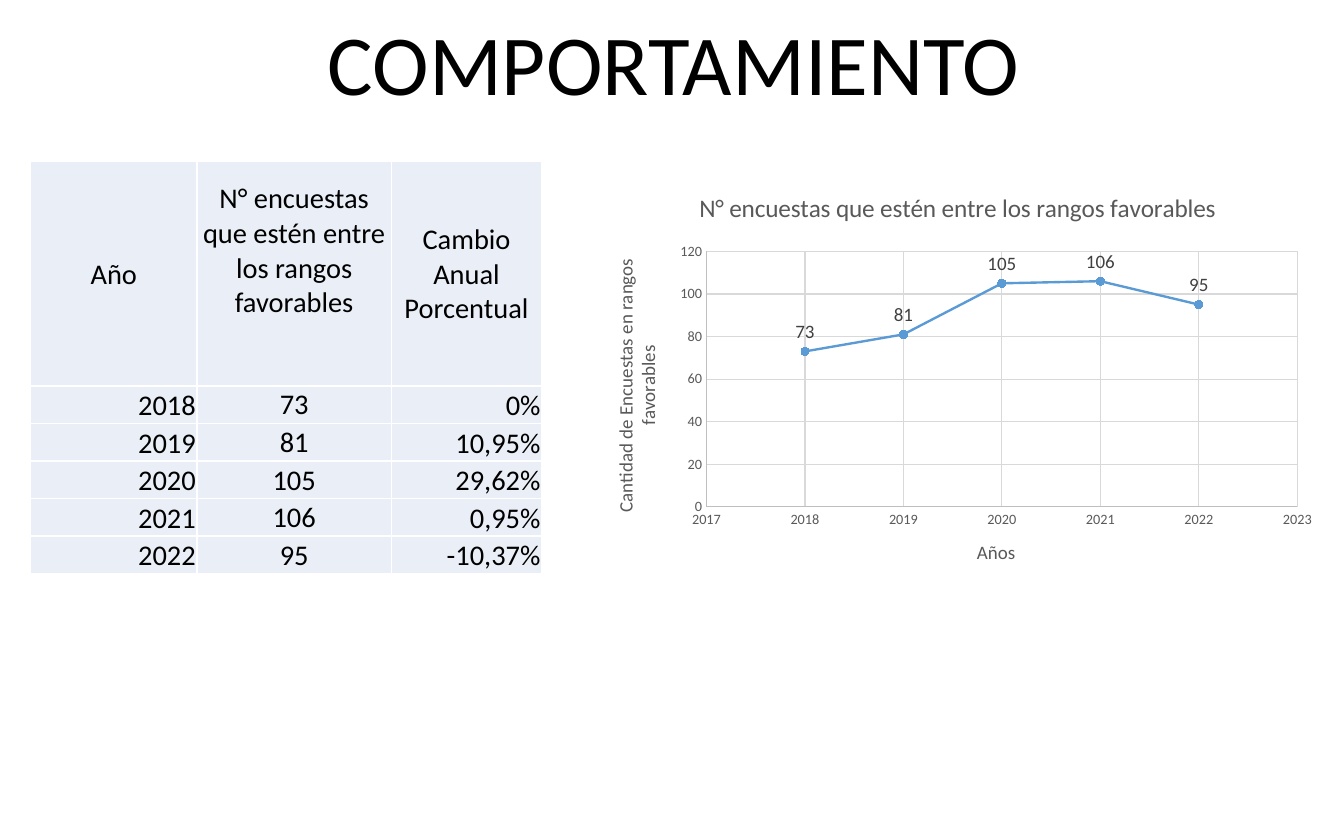
from lxml import etree
from pptx import Presentation
from pptx.chart.data import XyChartData
from pptx.dml.color import RGBColor
from pptx.enum.chart import XL_CHART_TYPE, XL_LABEL_POSITION, XL_MARKER_STYLE, XL_TICK_MARK
from pptx.enum.text import MSO_ANCHOR, PP_ALIGN
from pptx.oxml import parse_xml
from pptx.oxml.ns import nsdecls, qn
from pptx.util import Inches, Pt

SCATTER = XL_CHART_TYPE.XY_SCATTER_LINES
ABOVE = XL_LABEL_POSITION.ABOVE
CIRCLE = XL_MARKER_STYLE.CIRCLE
NO_TICK = XL_TICK_MARK.NONE
CENTER, RIGHT = PP_ALIGN.CENTER, PP_ALIGN.RIGHT
MIDDLE, BOTTOM = MSO_ANCHOR.MIDDLE, MSO_ANCHOR.BOTTOM

TITLE = "COMPORTAMIENTO"
MEASURE = "N° encuestas que estén entre los rangos favorables"
HEADERS = ["Año", MEASURE, "Cambio Anual Porcentual"]
SURVEYS = [
    (2018, 73, "0%"),
    (2019, 81, "10,95%"),
    (2020, 105, "29,62%"),
    (2021, 106, "0,95%"),
    (2022, 95, "-10,37%"),
]
X_TITLE = "Años"
Y_TITLE = "Cantidad de Encuestas en rangos favorables"

THEME = {
    "font": "Calibri",
    "text": "000000", "muted": "595959", "label": "404040",
    "cell": "EAEFF7", "border": "FFFFFF",
    "series": "5B9BD5", "axis": "BFBFBF", "grid": "D9D9D9",
    "title_size": 54, "table_size": 18, "chart_title_size": 16,
    "label_size": 12, "tick_size": 9,
}

COL_WIDTHS = [1.46, 1.71, 1.32]
HEADER_HEIGHT, ROW_HEIGHT = 1.97, 0.33
HEADER_LIFT = 0.41  # bottom inset that raises the middle heading
PLOT_AREA = {"x": 0.16, "y": 0.19, "w": 0.8, "h": 0.61}


def rgb(name):
    return RGBColor.from_string(THEME[name])


def style_font(font, size, color):
    font.name = THEME["font"]
    font.size = Pt(THEME[size])
    font.bold = False
    font.color.rgb = rgb(color)


def write(tf, text, size="table_size", color="text", align=CENTER):
    p = tf.paragraphs[0]
    p.alignment = align
    r = p.add_run()
    r.text = text
    style_font(r.font, size, color)


def style_line(line, color, width):
    line.color.rgb = rgb(color)
    line.width = Pt(width)


def add_borders(cell):
    tcPr = cell._tc.get_or_add_tcPr()
    for side in ("lnL", "lnR", "lnT", "lnB"):
        ln = etree.SubElement(tcPr, qn("a:" + side), w=str(Pt(1)))
        fill = etree.SubElement(ln, qn("a:solidFill"))
        etree.SubElement(fill, qn("a:srgbClr"), val=THEME["border"])


def fill_cell(cell, text, align, anchor, bottom=0.0):
    cell.margin_left = cell.margin_right = cell.margin_top = Inches(0.01)
    cell.margin_bottom = Inches(bottom)
    cell.vertical_anchor = anchor
    add_borders(cell)
    cell.fill.solid()
    cell.fill.fore_color.rgb = rgb("cell")
    write(cell.text_frame, text, align=align)


def add_survey_table(slide):
    n_rows = len(SURVEYS) + 1
    height = HEADER_HEIGHT + ROW_HEIGHT * len(SURVEYS)
    table = slide.shapes.add_table(
        n_rows, len(HEADERS), Inches(0.27), Inches(1.42),
        Inches(sum(COL_WIDTHS)), Inches(height)).table
    table.first_row = table.horz_banding = False
    for column, width in zip(table.columns, COL_WIDTHS):
        column.width = Inches(width)
    for i, row in enumerate(table.rows):
        row.height = Inches(ROW_HEIGHT if i else HEADER_HEIGHT)
    for c, text in enumerate(HEADERS):
        fill_cell(table.cell(0, c), text, CENTER, MIDDLE,
                  HEADER_LIFT if text == MEASURE else 0)
    for i, survey in enumerate(SURVEYS, start=1):
        for c, value in enumerate(survey):
            align, anchor = (CENTER, MIDDLE) if c == 1 else (RIGHT, BOTTOM)
            fill_cell(table.cell(i, c), str(value), align, anchor)


def style_axis(axis, title, low, high, step):
    axis.minimum_scale, axis.maximum_scale, axis.major_unit = low, high, step
    axis.major_tick_mark = axis.minor_tick_mark = NO_TICK
    axis.has_major_gridlines = True
    style_line(axis.major_gridlines.format.line, "grid", 0.75)
    style_line(axis.format.line, "axis", 0.75)
    style_font(axis.tick_labels.font, "tick_size", "muted")
    axis.tick_labels.number_format = "General"
    axis.tick_labels.number_format_is_linked = False
    write(axis.axis_title.text_frame, title, "label_size", "muted")


def place_plot_area(chart):
    """Fix the inner plot rectangle as fractions of the chart."""
    plot_area = chart._chartSpace.chart.plotArea
    for old in plot_area.findall(qn("c:layout")):
        plot_area.remove(old)
    modes = "".join(f'<c:{k}Mode val="edge"/>' for k in "xy")
    sizes = "".join(f'<c:{k} val="{v}"/>' for k, v in PLOT_AREA.items())
    plot_area.insert(0, parse_xml(
        f'<c:layout {nsdecls("c")}><c:manualLayout><c:layoutTarget val="inner"/>'
        f'{modes}{sizes}</c:manualLayout></c:layout>'))


def add_survey_chart(slide):
    data = XyChartData()
    points = data.add_series(MEASURE)
    for year, count, _ in SURVEYS:
        points.add_data_point(year, count)
    chart = slide.shapes.add_chart(
        SCATTER, Inches(5.17), Inches(1.51), Inches(6.49), Inches(3.68), data).chart
    style_font(chart.font, "tick_size", "text")
    chart.has_legend = False
    chart.has_title = True
    write(chart.chart_title.text_frame, MEASURE, "chart_title_size", "muted")
    chart.chart_title.include_in_layout = False
    style_axis(chart.category_axis, X_TITLE, 2017, 2023, 1)
    style_axis(chart.value_axis, Y_TITLE, 0, 120, 20)
    body = chart.value_axis.axis_title.text_frame._txBody.bodyPr
    body.set("rot", "-5400000")
    body.set("vert", "horz")
    place_plot_area(chart)

    plot = chart.plots[0]
    plot.vary_by_categories = False
    series = plot.series[0]
    series.smooth = False
    style_line(series.format.line, "series", 1.5)
    marker = series.marker
    marker.style, marker.size = CIRCLE, 5
    marker.format.fill.solid()
    marker.format.fill.fore_color.rgb = rgb("series")
    style_line(marker.format.line, "series", 0.75)
    for i in range(len(SURVEYS)):
        label = series.points[i].data_label
        style_font(label.font, "label_size", "label")
        label.position = ABOVE


def main():
    prs = Presentation()
    prs.slide_width, prs.slide_height = Inches(11.81), Inches(7.38)
    slide = prs.slides.add_slide(prs.slide_layouts[6])
    title = slide.shapes.add_textbox(Inches(2.75), Inches(0.04), Inches(6.34), Inches(1.01))
    title.text_frame.word_wrap = False
    write(title.text_frame, TITLE, "title_size")
    add_survey_chart(slide)
    add_survey_table(slide)
    prs.save("out.pptx")


if __name__ == "__main__":
    main()
